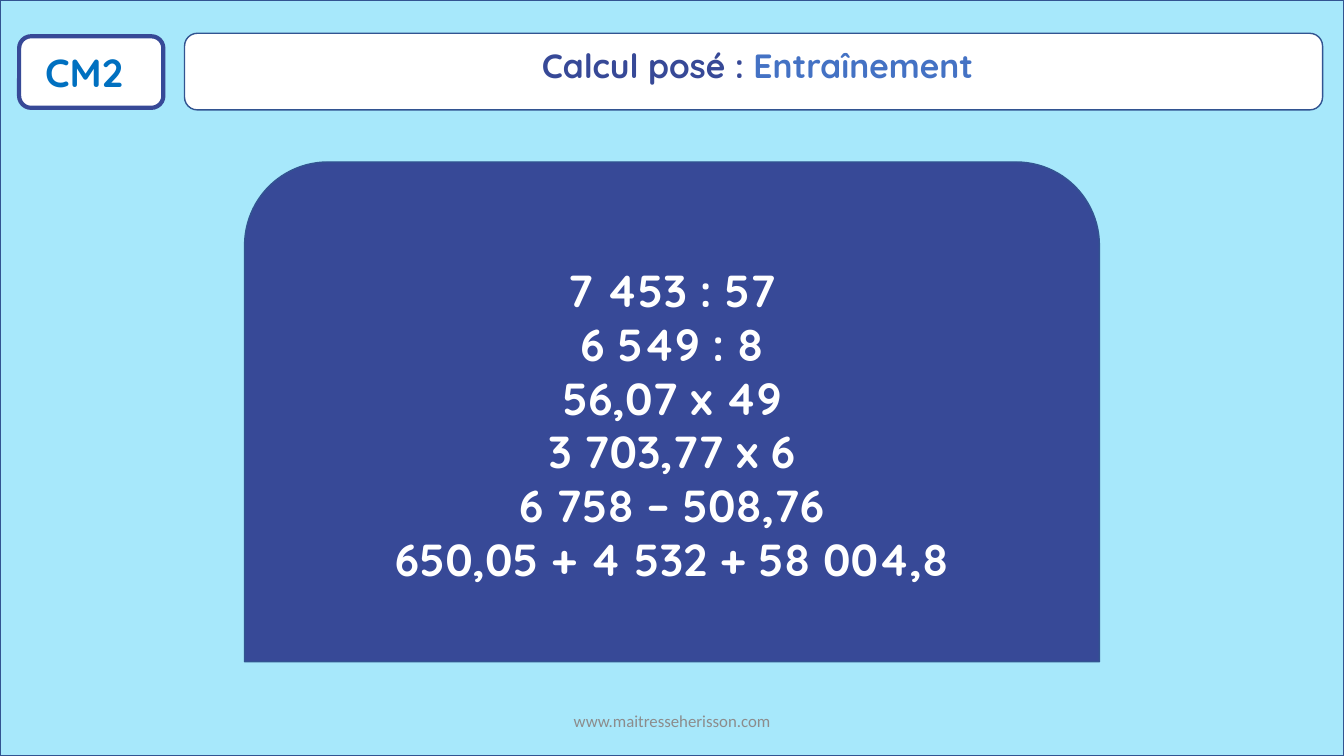
"""Build the CM2 slide of written calculation practice."""
from pptx import Presentation
from pptx.dml.color import RGBColor
from pptx.enum.shapes import MSO_SHAPE
from pptx.enum.text import MSO_ANCHOR, MSO_AUTO_SIZE, PP_ALIGN
from pptx.util import Pt

SKY = RGBColor(0xA7, 0xE8, 0xFB)
NAVY = RGBColor(0x37, 0x49, 0x97)
EDGE = RGBColor(0x32, 0x54, 0x91)
BLUE = RGBColor(0x44, 0x72, 0xC4)
AZURE = RGBColor(0x00, 0x70, 0xC0)
GREY = RGBColor(0x8C, 0x8C, 0x8C)
WHITE = RGBColor(0xFF, 0xFF, 0xFF)

SUMS = [
    "7 453 : 57",
    "6 549 : 8",
    "56,07 x 49",
    "3 703,77 x 6",
    "6 758 – 508,76",
    "650,05 + 4 532 + 58 004,8",
]


def write(frame, lines, size, color, font="Quicksand", bold=True,
          align=PP_ALIGN.CENTER, anchor=MSO_ANCHOR.TOP):
    frame.word_wrap = True
    frame.auto_size = MSO_AUTO_SIZE.NONE
    frame.vertical_anchor = anchor
    for i, line in enumerate(lines):
        para = frame.add_paragraph() if i else frame.paragraphs[0]
        para.alignment = align
        para.line_spacing = 1.0
        parts = [(line, color)] if isinstance(line, str) else line
        for text, tint in parts:
            run = para.add_run()
            run.text = text
            run.font.name = font
            run.font.size = Pt(size)
            run.font.bold = bold
            run.font.color.rgb = tint


class Page:
    def __init__(self, deck):
        self.slide = deck.slides.add_slide(deck.slide_layouts[5])
        self.shapes = self.slide.shapes

    def panel(self, kind, box, fill, edge=EDGE, width=1):
        shape = self.shapes.add_shape(kind, *map(Pt, box))
        shape.shadow.inherit = False
        shape.fill.solid()
        shape.fill.fore_color.rgb = fill
        shape.line.color.rgb = edge
        shape.line.width = Pt(width)
        return shape

    def label(self, box, text, size, color, **style):
        shape = self.shapes.add_textbox(*map(Pt, box))
        write(shape.text_frame, [text], size, color, **style)

    def title(self, box, parts, size):
        shape = self.shapes.title
        shape.left, shape.top, shape.width, shape.height = map(Pt, box)
        write(shape.text_frame, [parts], size, NAVY)
        tree = shape.element.getparent()
        tree.append(shape.element)


def main():
    deck = Presentation()
    deck.slide_width, deck.slide_height = Pt(960), Pt(540)
    page = Page(deck)
    page.panel(MSO_SHAPE.RECTANGLE, (0, 0, 960, 540), SKY)
    page.panel(MSO_SHAPE.ROUNDED_RECTANGLE, (13.7, 25.9, 103, 51.1),
               WHITE, NAVY, 3)
    page.label((25.2, 31, 79.2, 41), "CM2", 28, AZURE, align=PP_ALIGN.LEFT)
    page.label((318.2, 500.4, 324, 28.8), "www.maitresseherisson.com", 12,
               GREY, font="Calibri", bold=False, anchor=MSO_ANCHOR.MIDDLE)
    page.panel(MSO_SHAPE.ROUNDED_RECTANGLE, (131.8, 23.8, 812.9, 54.7), WHITE)
    page.title((137.5, 28.8, 807.1, 36),
               [("Calcul posé : ", NAVY), ("Entraînement", BLUE)], 24)
    card = page.panel(MSO_SHAPE.ROUND_2_SAME_RECTANGLE,
                      (174.7, 115.7, 610.6, 357), NAVY)
    write(card.text_frame, SUMS, 32, WHITE, anchor=MSO_ANCHOR.MIDDLE)
    deck.save("out.pptx")


if __name__ == "__main__":
    main()
